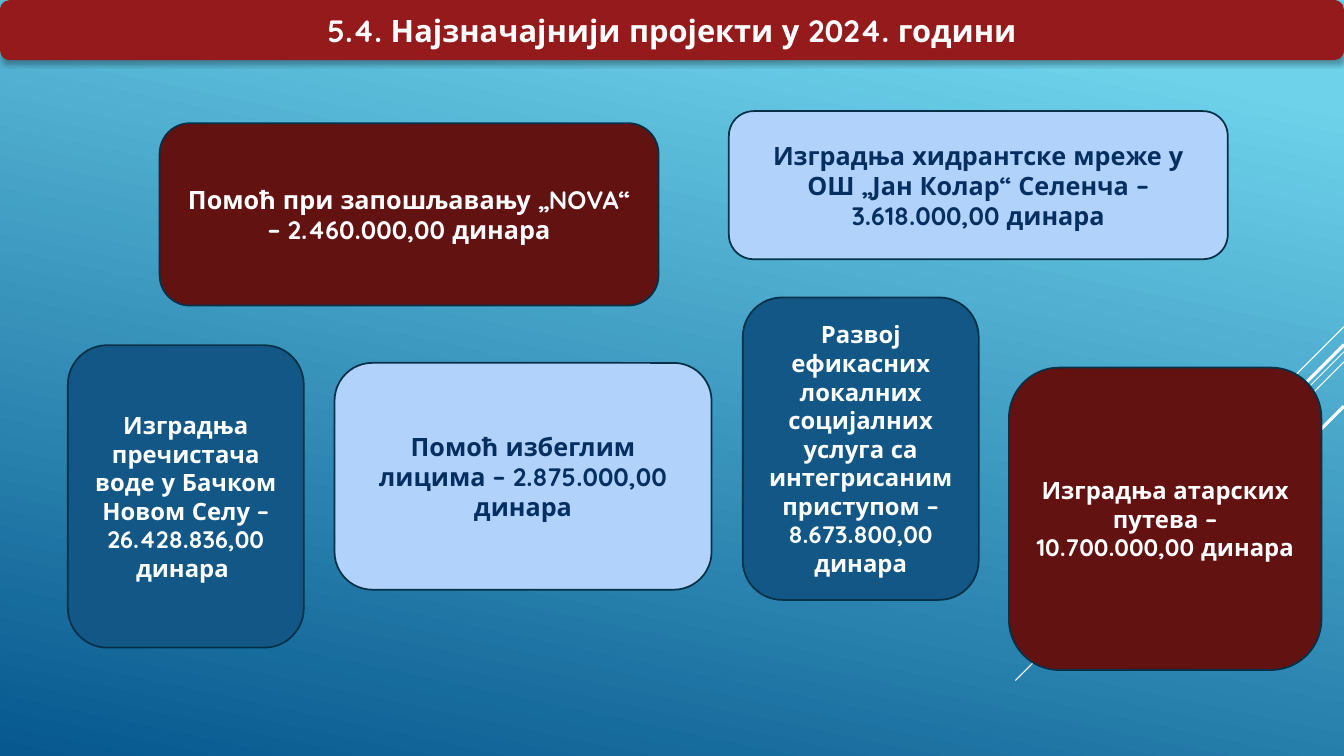
import pptx
import pptx.dml.color
import pptx.enum.shapes
import pptx.enum.text
import pptx.oxml
import pptx.oxml.ns
import pptx.util
from lxml import etree

Pt = pptx.util.Pt
WIDTH, HEIGHT = 960, 540
WHITE, NAVY, OUTLINE = "FFFFFF", "052F61", "043148"
RED, MAROON, BLUE, PALE = "941A1B", "631212", "125785", "B1D3FB"

# top at the right edge, horizontal and vertical run, line width
RAYS = [
    (233.3, 72, 0.75),
    (251.3, 234.7, 0.75),
    (258.5, 149, 0.75),
    (246.2, 137.5, 2.25),
    (290.2, 100, 2.25),
]

# left, top, width, height, fill, text colour, text size, text
PROJECTS = [
    (114, 88, 356.4, 130.3, MAROON, WHITE, 18,
     "Помоћ при запошљавању „NOVA“ – 2.460.000,00 динара"),
    (520.6, 79.4, 356.4, 105.8, PALE, NAVY, 18,
     "Изградња хидрантске мреже у ОШ „Јан Колар“ Селенча – 3.618.000,00 динара"),
    (720.7, 262.6, 223.2, 216, MAROON, WHITE, 17,
     "Изградња атарских путева – 10.700.000,00 динара"),
    (239, 259.2, 269.3, 162, PALE, NAVY, 18,
     "Помоћ избеглим лицима – 2.875.000,00 динара"),
    (48.5, 246.6, 168.5, 216, BLUE, WHITE, 17,
     "Изградња пречистача воде у Бачком Новом Селу – 26.428.836,00 динара "),
    (530.6, 212.5, 168.5, 216, BLUE, WHITE, 17,
     "Развој ефикасних локалних социјалних услуга са интегрисаним приступом"
     " – 8.673.800,00 динара"),
]


def rgb(code):
    return pptx.dml.color.RGBColor.from_string(code)


def write(box, text, size, color, font="Quicksand", bold=True):
    """Put centred text in the middle of a shape."""
    frame = box.text_frame
    frame.word_wrap = True
    frame.vertical_anchor = pptx.enum.text.MSO_ANCHOR.MIDDLE
    para = frame.paragraphs[0]
    para.alignment = pptx.enum.text.PP_ALIGN.CENTER
    span = para.add_run()
    span.text = text
    span.font.name = font
    span.font.size = Pt(size)
    span.font.bold = bold
    span.font.color.rgb = rgb(color)


class Painter:
    def __init__(self, page):
        self.page = page

    def background(self, stops, angle):
        """Fill the page with a gradient; the angle runs clockwise."""
        fill = self.page.background.fill
        fill.gradient()
        fill.gradient_angle = 360 - angle
        for stop, (position, color) in zip(fill.gradient_stops, stops):
            stop.position = position
            stop.color.rgb = rgb(color)

    def ray(self, top, run, width):
        line = self.page.shapes.add_connector(
            pptx.enum.shapes.MSO_CONNECTOR.STRAIGHT,
            Pt(WIDTH), Pt(top), Pt(WIDTH - run), Pt(top + run))
        line.line.color.rgb = rgb(WHITE)
        line.line.width = Pt(width)
        etree.SubElement(line._element.spPr, pptx.oxml.ns.qn("a:effectLst"))

    def panel(self, left, top, width, height, fill, outline=None):
        box = self.page.shapes.add_shape(
            pptx.enum.shapes.MSO_SHAPE.ROUNDED_RECTANGLE,
            Pt(left), Pt(top), Pt(width), Pt(height))
        box.shadow.inherit = False
        box.fill.solid()
        box.fill.fore_color.rgb = rgb(fill)
        if outline:
            box.line.color.rgb = rgb(outline)
            box.line.width = Pt(1.25)
        else:
            box.line.fill.background()
        return box

    def shadow(self, box, blur, distance, opacity):
        """Drop a black shadow straight down."""
        effects = box._element.spPr.find(pptx.oxml.ns.qn("a:effectLst"))
        effects.append(pptx.oxml.parse_xml(
            f'<a:outerShdw {pptx.oxml.ns.nsdecls("a")} blurRad="{Pt(blur)}" '
            f'dist="{Pt(distance)}" dir="5400000" algn="ctr" rotWithShape="0">'
            f'<a:srgbClr val="000000"><a:alpha val="{opacity * 1000}"/>'
            '</a:srgbClr></a:outerShdw>'))


def main():
    deck = pptx.Presentation()
    deck.slide_width, deck.slide_height = Pt(WIDTH), Pt(HEIGHT)
    painter = Painter(deck.slides.add_slide(deck.slide_layouts[6]))

    painter.background([(0.1, "6ED2EB"), (1, "06588E")], angle=102)
    for ray in RAYS:
        painter.ray(*ray)

    title = painter.panel(0, 0, WIDTH, 43, RED)
    painter.shadow(title, blur=3.5, distance=2.2, opacity=32)
    write(title, "5.4. Најзначајнији пројекти у 2024. години", size=22, color=WHITE)

    for left, top, width, height, fill, color, size, text in PROJECTS:
        box = painter.panel(left, top, width, height, fill, outline=OUTLINE)
        write(box, text, size=size, color=color)

    deck.save("out.pptx")


if __name__ == "__main__":
    main()
